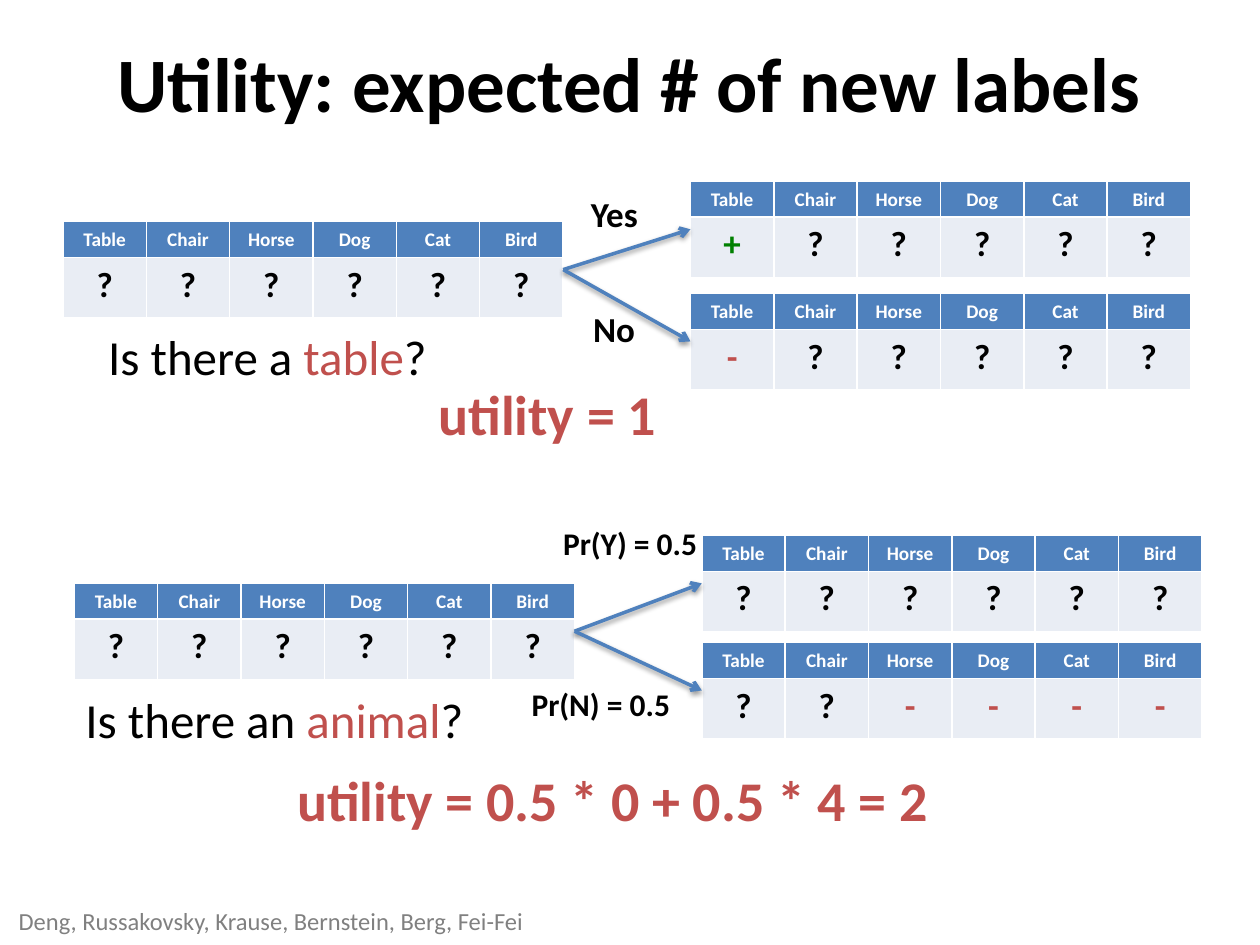
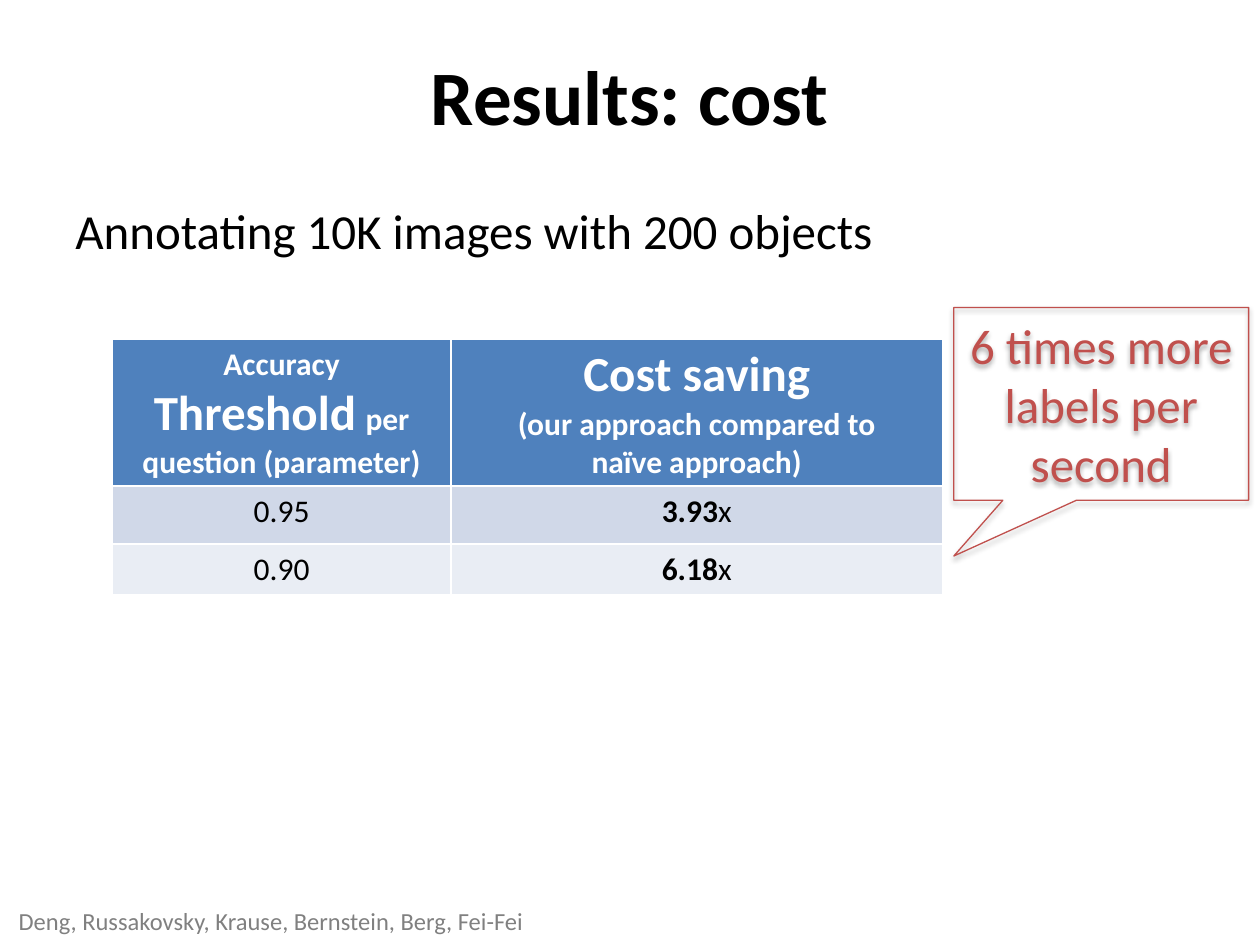
from lxml.etree import SubElement
from pptx import Presentation
from pptx.dml.color import RGBColor
from pptx.enum.shapes import MSO_CONNECTOR, MSO_SHAPE
from pptx.enum.text import MSO_ANCHOR, PP_ALIGN
from pptx.oxml.ns import qn
from pptx.util import Inches, Pt

FONT = "Calibri"
BLACK, WHITE, GRAY = "000000", "FFFFFF", "808080"
BLUE, RED, GREEN = "4F81BD", "C0504D", "008000"
LIGHT_BAND, DARK_BAND = "E9EDF4", "D0D8E8"
OBJECTS = ["Table", "Chair", "Horse", "Dog", "Cat", "Bird"]
ANSWER_COLORS = {"+": GREEN, "-": RED, "?": BLACK}
LABELS_WIDTH, LABELS_ROWS = 3.97, (0.28, 0.48)
OUTCOME_OFFSET = 4.98
CREDIT = "Deng, Russakovsky, Krause, Bernstein, Berg, Fei-Fei"


def rgb(color):
    """Turn a hex string into a colour."""
    return RGBColor.from_string(color)


def write(paragraph, text, size=18, color=BLACK, bold=False, align=None):
    """Append formatted text to a paragraph."""
    run = paragraph.add_run()
    run.text = text
    run.font.name = FONT
    run.font.size = Pt(size)
    run.font.bold = bold
    run.font.color.rgb = rgb(color)
    if align is not None:
        paragraph.alignment = align


def add_label(slide, left, top, width, height, *parts, **style):
    """Add a text box whose parts are (text, colour) pairs."""
    box = slide.shapes.add_textbox(*map(Inches, (left, top, width, height)))
    box.text_frame.word_wrap = True
    for text, color in parts:
        write(box.text_frame.paragraphs[0], text, color=color, **style)


def add_titled_slide(deck, title, top):
    """Add a slide with its title and the credit line."""
    slide = deck.slides.add_slide(deck.slide_layouts[5])
    heading = slide.shapes.title
    heading.left, heading.top = Inches(0.5), Inches(top)
    heading.width, heading.height = Inches(9), Inches(1.25)
    heading.text_frame.vertical_anchor = MSO_ANCHOR.MIDDLE
    write(heading.text_frame.paragraphs[0], title, size=44, bold=True, align=PP_ALIGN.CENTER)
    add_label(slide, 0.05, 7.14, 4.6, 0.34, (CREDIT, GRAY), size=14)
    return slide


def add_grid(slide, left, top, width, row_heights, columns):
    """Add a table with the given row heights."""
    frame = slide.shapes.add_table(len(row_heights), columns, Inches(left), Inches(top),
                                   Inches(width), Inches(sum(row_heights)))
    for row, height in zip(frame.table.rows, row_heights):
        row.height = Inches(height)
    return frame


def fill_cell(cell, fill, *paragraphs):
    """Fill a cell and write centred paragraphs of (text, style) runs."""
    cell.fill.solid()
    cell.fill.fore_color.rgb = rgb(fill)
    for index, runs in enumerate(paragraphs):
        paragraph = cell.text_frame.add_paragraph() if index else cell.text_frame.paragraphs[0]
        for text, style in runs:
            write(paragraph, text, align=PP_ALIGN.CENTER, **style)


def add_labels(slide, left, top, answers):
    """Add a table of objects with one answer sign for each."""
    frame = add_grid(slide, left, top, LABELS_WIDTH, LABELS_ROWS, len(OBJECTS))
    for column, (name, answer) in enumerate(zip(OBJECTS, answers)):
        fill_cell(frame.table.cell(0, column), BLUE,
                  [(name, dict(size=11, color=WHITE, bold=True))])
        fill_cell(frame.table.cell(1, column), LIGHT_BAND,
                  [(answer, dict(size=20, color=ANSWER_COLORS[answer], bold=True))])
    return frame


def add_shadow(shape, opacity, distance):
    """Give a shape a soft shadow straight below it."""
    effects = SubElement(shape._element.spPr, qn("a:effectLst"))
    shadow = SubElement(effects, qn("a:outerShdw"), blurRad=str(Pt(3.1)), dist=str(Pt(distance)),
                        dir="5400000", rotWithShape="0")
    color = SubElement(shadow, qn("a:srgbClr"), val=BLACK)
    SubElement(color, qn("a:alpha"), val=str(opacity * 1000))


def add_arrow(slide, source, target):
    """Join the right side of one table to the left side of another."""
    arrow = slide.shapes.add_connector(MSO_CONNECTOR.STRAIGHT, 0, 0, 0, 0)
    arrow.begin_connect(source, 3)
    arrow.end_connect(target, 1)
    arrow.line.color.rgb = rgb(BLUE)
    arrow.line.width = Pt(2)
    SubElement(arrow.line._get_or_add_ln(), qn("a:tailEnd"), type="arrow")
    add_shadow(arrow, 38, 1.6)


def add_question(slide, left, top, outcomes):
    """Add a table of unknown labels with an arrow to each outcome."""
    unknown = add_labels(slide, left, top, "??????")
    for outcome_top, answers in outcomes:
        outcome = add_labels(slide, left + OUTCOME_OFFSET, outcome_top, answers)
        add_arrow(slide, unknown, outcome)


def add_callout(slide, text):
    """Add the outlined speech callout."""
    callout = slide.shapes.add_shape(MSO_SHAPE.RECTANGULAR_CALLOUT, Inches(7.57), Inches(2.44),
                                     Inches(2.34), Inches(1.53))
    callout.adjustments[0], callout.adjustments[1] = -0.5, 0.79
    callout.fill.background()
    callout.line.color.rgb = rgb(RED)
    callout.line.width = Pt(0.75)
    add_shadow(callout, 35, 1.8)
    callout.text_frame.word_wrap = True
    callout.text_frame.vertical_anchor = MSO_ANCHOR.MIDDLE
    write(callout.text_frame.paragraphs[0], text, size=28, color=RED, align=PP_ALIGN.CENTER)


def build_utility(deck):
    """Build the slide that compares the utility of two questions."""
    slide = add_titled_slide(deck, "Utility: expected # of new labels", 0.02)
    add_question(slide, 0.5, 1.76, [(1.44, "+?????"), (2.33, "-?????")])
    add_question(slide, 0.59, 4.63, [(4.25, "??????"), (5.1, "??----")])
    add_label(slide, 0.76, 2.54, 3.32, 0.57,
              ("Is there a ", BLACK), ("table", RED), ("?", BLACK), size=28)
    add_label(slide, 0.58, 5.42, 3.56, 0.57,
              ("Is there an ", BLACK), ("animal", RED), ("?", BLACK), size=28)
    for left, top, width, text, size, color in [
        (4.59, 1.48, 2.25, "Yes", 20, BLACK),
        (4.61, 2.39, 1.36, "No", 20, BLACK),
        (4.37, 4.11, 1.69, "Pr(Y) = 0.5", 18, BLACK),
        (4.12, 5.39, 1.69, "Pr(N) = 0.5", 18, BLACK),
        (3.38, 2.96, 2.19, "utility = 1", 32, RED),
        (2.26, 6.03, 5.54, "utility = 0.5 * 0 + 0.5 * 4 = 2", 32, RED),
    ]:
        add_label(slide, left, top, width, 0.44, (text, color), size=size, bold=True)


def build_results(deck):
    """Build the slide with the cost savings."""
    slide = add_titled_slide(deck, "Results: cost", 0.13)
    add_label(slide, 0.5, 1.54, 9, 0.6, ("Annotating 10K images with 200 objects", BLACK), size=28)
    savings = add_grid(slide, 0.89, 2.69, 6.59, (1.16, 0.46, 0.4), 2).table
    savings.columns[0].width, savings.columns[1].width = Inches(2.69), Inches(3.9)
    small = dict(color=WHITE, bold=True)
    large = dict(small, size=28)
    fill_cell(savings.cell(0, 0), BLUE,
              [("Accuracy ", small), ("Threshold", large), (" ", dict(small, size=24)),
               ("per question (parameter)", small)])
    fill_cell(savings.cell(0, 1), BLUE, [("Cost saving", large)],
              [("(our approach compared to", small)], [("naïve approach)", small)])
    rows = [("0.95", "3.93", DARK_BAND), ("0.90", "6.18", LIGHT_BAND)]
    for row, (threshold, saving, band) in enumerate(rows, start=1):
        fill_cell(savings.cell(row, 0), band, [(threshold, {})])
        fill_cell(savings.cell(row, 1), band, [(saving, dict(bold=True)), ("x", {})])
    add_callout(slide, "6 times more labels per second")


def main():
    """Build and save the deck."""
    deck = Presentation()
    deck.slide_width, deck.slide_height = Inches(10), Inches(7.5)
    build_utility(deck)
    build_results(deck)
    deck.save("out.pptx")


if __name__ == "__main__":
    main()
